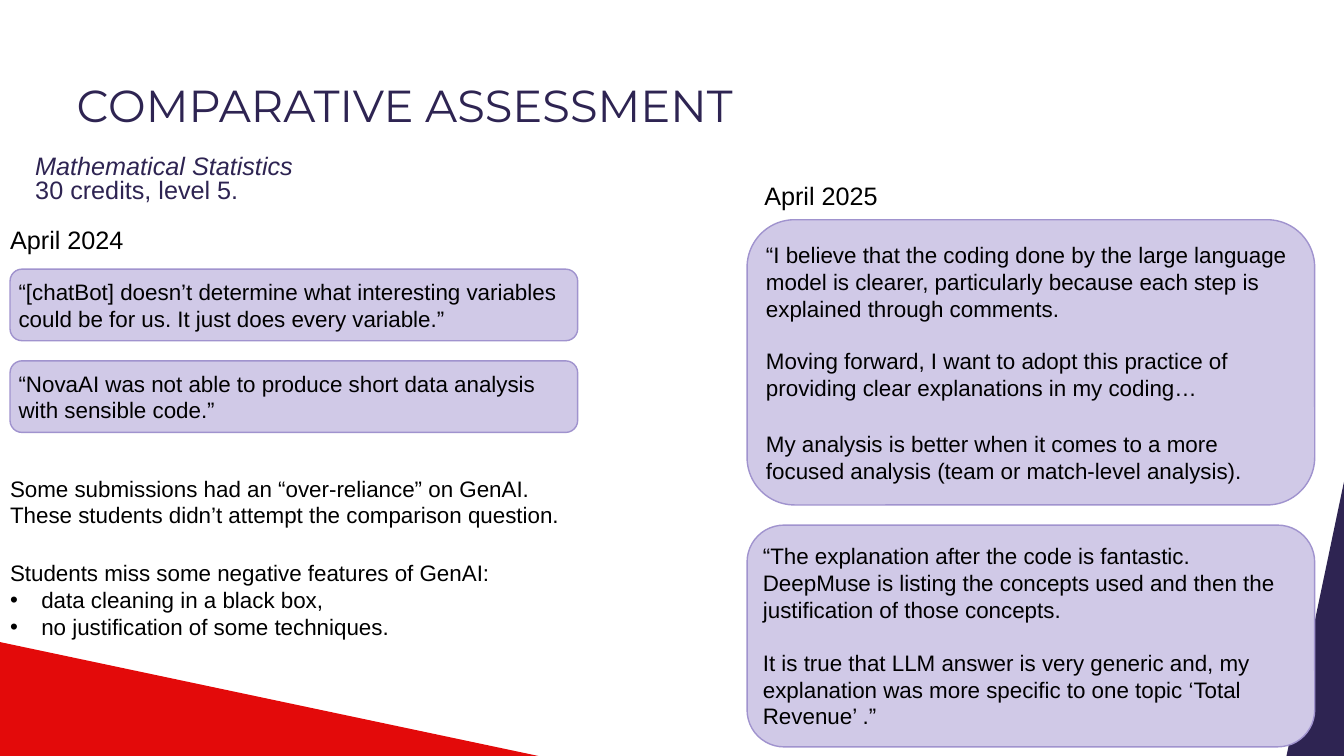
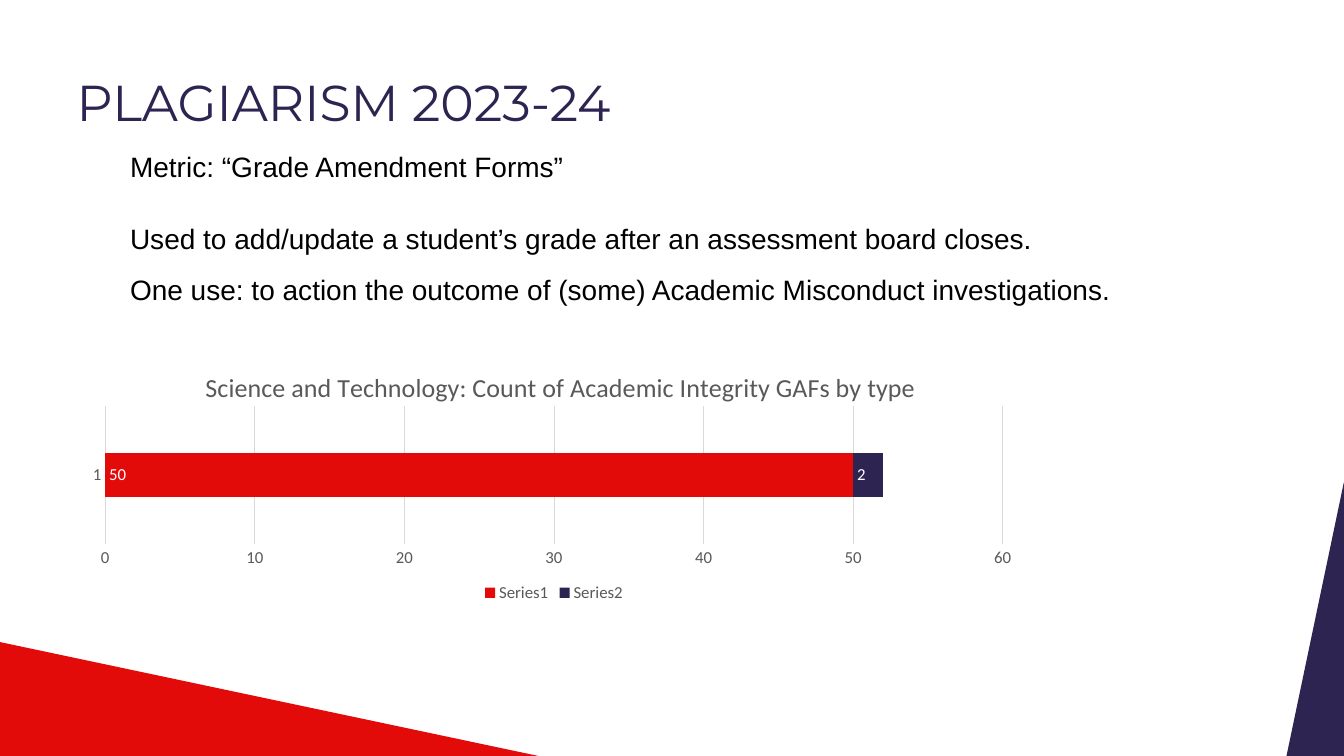
from dataclasses import dataclass

from lxml.etree import SubElement
from pptx import Presentation
from pptx.chart.data import CategoryChartData
from pptx.dml.color import RGBColor
from pptx.enum.chart import (XL_CHART_TYPE, XL_LABEL_POSITION,
                             XL_LEGEND_POSITION, XL_TICK_MARK)
from pptx.enum.shapes import MSO_SHAPE
from pptx.enum.text import MSO_ANCHOR, PP_ALIGN
from pptx.oxml import parse_xml
from pptx.oxml.ns import nsdecls, qn
from pptx.util import Inches, Pt


@dataclass(frozen=True)
class Theme:
    red: str = "E30A0A"
    navy: str = "2E2452"
    black: str = "000000"
    white: str = "FFFFFF"
    quote_fill: str = "D0C9E7"
    quote_line: str = "A093CE"
    grey: str = "595959"
    grid: str = "D9D9D9"
    title_font: str = "Montserrat"
    body_font: str = "Arial"
    chart_font: str = "Calibri"
    quote_size: float = 16
    heading_size: float = 18
    body_size: float = 20
    chart_size: float = 12
    chart_title_size: float = 18.6
    blank_line: float = 18.4  # height of one line of quote text


THEME = Theme()
WIDTH, HEIGHT = 13.33, 7.5


def rgb(value):
    return RGBColor.from_string(value)


def style_font(font, name, size, color):
    font.name, font.size = name, Pt(size)
    font.color.rgb = rgb(color)


def write(frame, lines, size, color=THEME.black, font=THEME.body_font,
          inset=0.0, anchor=MSO_ANCHOR.TOP, wrap=True):
    """Fill a text frame with one paragraph per line; return the paragraphs."""
    frame.word_wrap = wrap
    frame.vertical_anchor = anchor
    frame.margin_left = frame.margin_right = Inches(inset)
    frame.margin_top = frame.margin_bottom = Inches(inset)
    frame.text = "\n".join(lines)
    for paragraph in frame.paragraphs:
        paragraph.alignment = PP_ALIGN.LEFT
        for run in paragraph.runs:
            style_font(run.font, font, size, color)
    return frame.paragraphs


def add_text(slide, box, lines, size, **style):
    frame = slide.shapes.add_textbox(*map(Inches, box)).text_frame
    return write(frame, lines, size, **style)


def indent(paragraph, left, first=0.0, bullet=None):
    properties = paragraph._p.get_or_add_pPr()
    properties.set("marL", str(Inches(left)))
    properties.set("indent", str(Inches(first)))
    if bullet:
        SubElement(properties, qn("a:buFont")).set("typeface", "Arial")
        SubElement(properties, qn("a:buChar")).set("char", bullet)


# Shared frame: corner bands and title
def add_band(slide, corners, color):
    points = [(Inches(x), Inches(y)) for x, y in corners]
    builder = slide.shapes.build_freeform(*points[0])
    builder.add_line_segments(points[1:], close=True)
    band = builder.convert_to_shape()
    band.shadow.inherit = False
    band.fill.solid()
    band.fill.fore_color.rgb = rgb(color)
    band.line.fill.background()


def new_slide(deck, title, title_size):
    slide = deck.slides.add_slide(deck.slide_layouts[6])
    add_band(slide, [(0, 6.37), (5.34, HEIGHT), (0, HEIGHT)], THEME.red)
    add_band(slide, [(WIDTH, 4.78), (WIDTH, HEIGHT), (12.76, HEIGHT)],
             THEME.navy)
    heading, = add_text(slide, (0.76, 0.48, 11.11, 0.83), [title], title_size,
                        color=THEME.navy, font=THEME.title_font,
                        anchor=MSO_ANCHOR.BOTTOM)
    heading.line_spacing = 0.9
    return slide


# Quote column: a dated heading over rounded boxes
def add_quote(slide, box, lines, gaps):
    quote = slide.shapes.add_shape(MSO_SHAPE.ROUNDED_RECTANGLE,
                                   *map(Inches, box))
    quote.shadow.inherit = False
    quote.fill.solid()
    quote.fill.fore_color.rgb = rgb(THEME.quote_fill)
    quote.line.color.rgb = rgb(THEME.quote_line)
    quote.line.width = Pt(1)
    paragraphs = write(quote.text_frame, lines, THEME.quote_size, inset=0.05,
                       anchor=MSO_ANCHOR.MIDDLE)
    for index, gap in gaps.items():
        paragraphs[index].space_before = Pt(gap)


def add_quote_column(slide, left, top, date, date_at, quotes, width=5.63,
                     gap=0.2):
    add_text(slide, (*date_at, 1.39, 0.48), [date], THEME.heading_size,
             wrap=False)
    for height, lines, gaps in quotes:
        add_quote(slide, (left, top, width, height), lines, gaps)
        top += height + gap


def add_findings(slide, left, top):
    add_text(slide, (left, top, 6.24, 0.6), [
        "Some submissions had an “over-reliance” on GenAI.",
        "These students didn’t attempt the comparison question.",
    ], THEME.quote_size)
    _, *features = add_text(slide, (left, top + 0.84, 6.5, 0.81), [
        "Students miss some negative features of GenAI:",
        "data cleaning in a black box,",
        "no justification of some techniques.",
    ], THEME.quote_size)
    for feature in features:
        indent(feature, 0.31, -0.31, "•")


def build_assessment(deck):
    slide = new_slide(deck, "COMPARATIVE ASSESSMENT", 32)
    module, = add_text(slide, (0.35, 1.55, 4.53, 0.48),
                       ["Mathematical Statistics\v30 credits, level 5."],
                       THEME.heading_size, color=THEME.navy)
    module.line_spacing = 0.8
    module.runs[0].font.italic = True

    add_quote_column(slide, 0.1, 2.67, "April 2024", (0.1, 2.23), [
        (0.71, ["“[chatBot] doesn’t determine what interesting variables "
                "could be for us. It just does every variable.”"], {}),
        (0.71, ["“NovaAI was not able to produce short data analysis "
                "with sensible code.”"], {}),
    ])
    add_findings(slide, 0.1, 4.71)

    blank = THEME.blank_line
    add_quote_column(slide, 7.41, 2.18, "April 2025", (7.58, 1.79), [
        (2.83, ["“I believe that the coding done by the large language model "
                "is clearer, particularly because each step is explained "
                "through comments.",
                "Moving forward, I want to adopt this practice of providing "
                "clear explanations in my coding…",
                "My analysis is better when it comes to a more",
                "focused analysis (team or match-level analysis)."],
         {1: blank, 2: blank + 2.3}),
        (2.2, ["“The explanation after the code is fantastic. DeepMuse is "
               "listing the concepts used and then the justification of "
               "those concepts.",
               "It is true that LLM answer is very generic and, my "
               "explanation was more specific to one topic ‘Total "
               "Revenue’ .”"], {1: blank}),
    ])


# Chart of grade amendment forms
def set_layout(parent, before, target, **box):
    """Place a chart part by fractions of the chart's size."""
    for old in parent.findall(qn("c:layout")):
        parent.remove(old)
    modes = "".join(f'<c:{axis}Mode val="edge"/>' for axis in "xy")
    sizes = "".join(f'<c:{key} val="{value}"/>' for key, value in box.items())
    layout = parse_xml(f'<c:layout {nsdecls("c")}><c:manualLayout>{target}'
                       f'{modes}{sizes}</c:manualLayout></c:layout>')
    parent.insert(before, layout)


def style_axis(axis):
    axis.major_tick_mark = axis.minor_tick_mark = XL_TICK_MARK.NONE
    style_font(axis.tick_labels.font, THEME.chart_font, THEME.chart_size,
               THEME.grey)


def add_forms_chart(slide, box):
    data = CategoryChartData()
    data.categories = ["1"]
    data.add_series("Series1", [50])
    data.add_series("Series2", [2])
    chart = slide.shapes.add_chart(XL_CHART_TYPE.BAR_STACKED,
                                   *map(Inches, box), data).chart
    style_font(chart.font, THEME.chart_font, THEME.chart_size, THEME.grey)

    chart.has_title = True
    caption = chart.chart_title.text_frame
    caption.text = ("Science and Technology: Count of Academic Integrity "
                    "GAFs by type")
    caption_font = caption.paragraphs[0].runs[0].font
    style_font(caption_font, THEME.chart_font, THEME.chart_title_size,
               THEME.grey)
    caption_font.bold = False
    set_layout(chart.chart_title._element, 1, "", x=0.13, y=0.07)

    chart.has_legend = True
    chart.legend.position = XL_LEGEND_POSITION.BOTTOM
    chart.legend.include_in_layout = False

    forms, counts = chart.category_axis, chart.value_axis
    style_axis(forms)
    style_axis(counts)
    forms.format.line.color.rgb = rgb(THEME.grid)
    forms.format.line.width = Pt(0.75)
    counts.format.line.fill.background()
    counts.minimum_scale, counts.maximum_scale = 0, 60
    counts.major_unit = 10
    gridline = counts.major_gridlines.format.line
    gridline.color.rgb, gridline.width = rgb(THEME.grid), Pt(0.75)

    plot = chart.plots[0]
    plot.gap_width, plot.overlap = 219, 100
    plot.vary_by_categories = False
    for series, color in zip(plot.series, (THEME.red, THEME.navy)):
        series.format.fill.solid()
        series.format.fill.fore_color.rgb = rgb(color)
        labels = series.data_labels
        labels.show_value = True
        labels.position = XL_LABEL_POSITION.INSIDE_BASE
        style_font(labels.font, THEME.chart_font, THEME.chart_size,
                   THEME.white)
    plot_area = chart._chartSpace.find(".//" + qn("c:plotArea"))
    set_layout(plot_area, 0, '<c:layoutTarget val="inner"/>',
               x=0.03, y=0.23, w=0.94, h=0.53)


def build_plagiarism(deck):
    slide = new_slide(deck, "PLAGIARISM 2023-24", 36)
    left, width = 0.76, 11.74
    for top, height, lines in (
        (1.48, 0.34, ["Metric: “Grade Amendment Forms”"]),
        (2.2, 0.84, ["Used to add/update a student’s grade after an "
                     "assessment board closes.",
                     "One use: to action the outcome of (some) Academic "
                     "Misconduct investigations."]),
    ):
        for point in add_text(slide, (left, top, width, height), lines,
                              THEME.body_size):
            indent(point, 0.53)
            point.space_after = Pt(12)
    add_forms_chart(slide, (left, 3.43, 9.47, 2.59))


def main():
    deck = Presentation()
    deck.slide_width, deck.slide_height = Inches(WIDTH), Inches(HEIGHT)
    build_assessment(deck)
    build_plagiarism(deck)
    deck.save("out.pptx")


if __name__ == "__main__":
    main()
